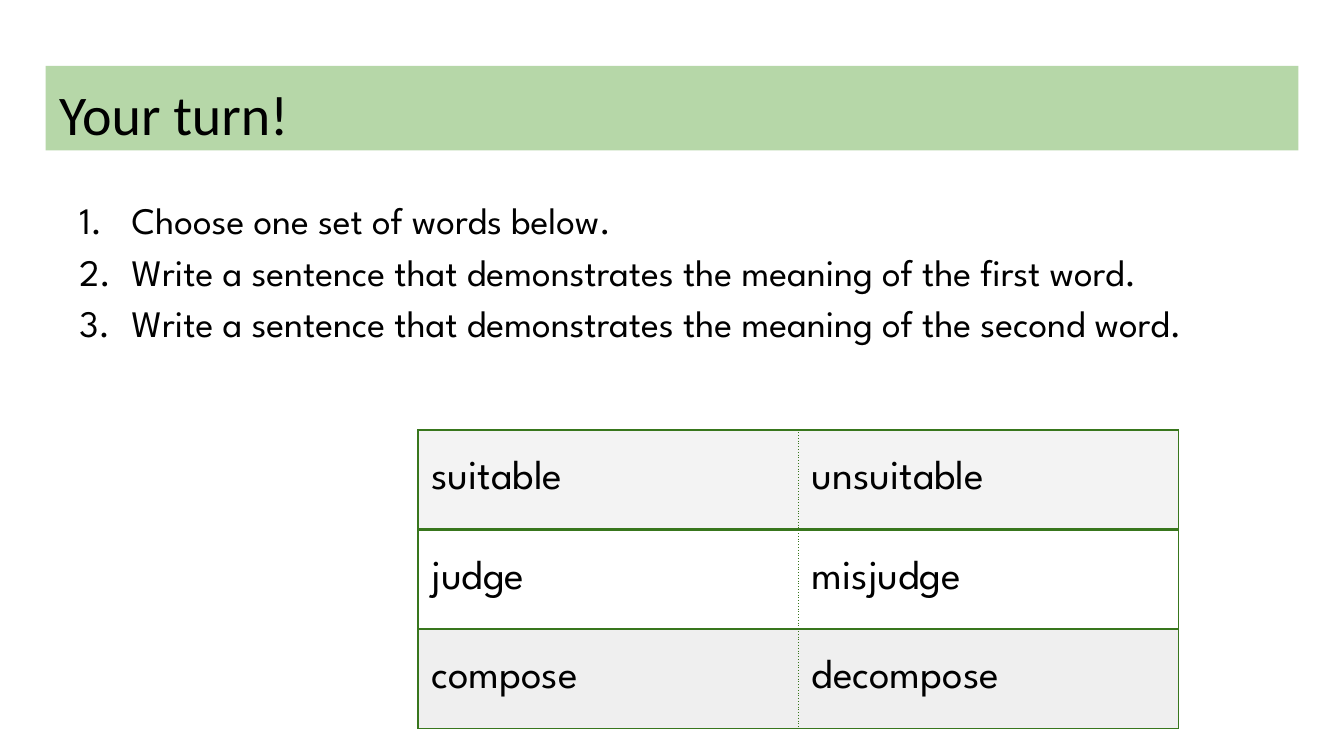
"""Build the "Your turn!" slide with a numbered task list and a table of word pairs."""
import pptx
import pptx.dml.color
import pptx.enum.text
import pptx.oxml.ns
import pptx.util
from dataclasses import dataclass
from lxml import etree

Inches = pptx.util.Inches
RGB = pptx.dml.color.RGBColor.from_string
qn = pptx.oxml.ns.qn


@dataclass(frozen=True)
class Theme:
    ink: str = "000000"
    band: str = "B6D7A8"
    rule: str = "38761D"
    rows: tuple = ("F3F3F3", "FFFFFF", "EFEFEF")
    head: str = "Calibri"
    body: str = "League Spartan"
    big: int = 30
    list: int = 20
    cell: int = 22
    thin: float = 0.75
    thick: float = 1.5


theme = Theme()


def style(para, font, size):
    para.alignment = pptx.enum.text.PP_ALIGN.LEFT
    para.space_before = pptx.util.Pt(0)
    for run in para.runs:
        run.font.name = font
        run.font.size = pptx.util.Pt(size)
        run.font.color.rgb = RGB(theme.ink)


def place(shape, left, top, width, height):
    shape.left, shape.top = Inches(left), Inches(top)
    shape.width, shape.height = Inches(width), Inches(height)
    frame = shape.text_frame
    frame.word_wrap = True
    frame.auto_size = pptx.enum.text.MSO_AUTO_SIZE.NONE
    frame.vertical_anchor = pptx.enum.text.MSO_ANCHOR.TOP
    frame.margin_left = frame.margin_right = Inches(0.1)
    frame.margin_top = frame.margin_bottom = Inches(0.1)
    return frame


deck = pptx.Presentation()
deck.slide_width = Inches(10)
deck.slide_height = Inches(10 * 9 / 16)
slide = deck.slides.add_slide(deck.slide_layouts[1])

title = slide.shapes.title
frame = place(title, 0.34, 0.49, 9.32, 0.63)
title.fill.solid()
title.fill.fore_color.rgb = RGB(theme.band)
frame.text = "Your turn!"
style(frame.paragraphs[0], theme.head, theme.big)

steps = [
    "Choose one set of words below.",
    "Write a sentence that demonstrates the meaning of the first word.",
    "Write a sentence that demonstrates the meaning of the second word.",
]
frame = place(slide.placeholders[1], 0.38, 1.32, 9.28, 2.01)
frame.text = "\n".join(steps)
for para in frame.paragraphs:
    props = para._p.get_or_add_pPr()
    props.set("marL", str(Inches(0.5)))
    props.set("indent", str(Inches(-0.39)))
    tint = etree.SubElement(props, qn("a:buClr"))
    etree.SubElement(tint, qn("a:srgbClr"), val=theme.ink)
    etree.SubElement(props, qn("a:buFont"), typeface=theme.body)
    etree.SubElement(props, qn("a:buAutoNum"), type="arabicPeriod")
    para.line_spacing = 1.15
    style(para, theme.body, theme.list)

pairs = [("suitable", "unsuitable"), ("judge", "misjudge"), ("compose", "decompose")]
wide, high = 2.83, 0.74
last = len(pairs) - 1
table = slide.shapes.add_table(
    len(pairs), 2, Inches(3.11), Inches(3.2), Inches(2 * wide), Inches(high * len(pairs))
).table
table.first_row = table.horz_banding = False
for col in table.columns:
    col.width = Inches(wide)

for i, pair in enumerate(pairs):
    table.rows[i].height = Inches(high)
    for j, word in enumerate(pair):
        cell = table.cell(i, j)
        cell.text = word
        cell.vertical_anchor = pptx.enum.text.MSO_ANCHOR.MIDDLE
        cell.margin_left = cell.margin_right = Inches(0.1)
        cell.margin_top = cell.margin_bottom = Inches(0.1)
        style(cell.text_frame.paragraphs[0], theme.body, theme.cell)
        edges = [
            ("a:lnL", theme.thin, "dot" if j == 1 else "solid"),
            ("a:lnR", theme.thin, "dot" if j == 0 else "solid"),
            ("a:lnT", theme.thin if i == 0 else theme.thick, "solid"),
            ("a:lnB", theme.thin if i == last else theme.thick, "solid"),
        ]
        props = cell._tc.get_or_add_tcPr()
        for tag, size, dash in edges:
            line = etree.SubElement(props, qn(tag), w=str(pptx.util.Pt(size)))
            paint = etree.SubElement(line, qn("a:solidFill"))
            etree.SubElement(paint, qn("a:srgbClr"), val=theme.rule)
            etree.SubElement(line, qn("a:prstDash"), val=dash)
        cell.fill.solid()
        cell.fill.fore_color.rgb = RGB(theme.rows[i])

deck.save("out.pptx")
